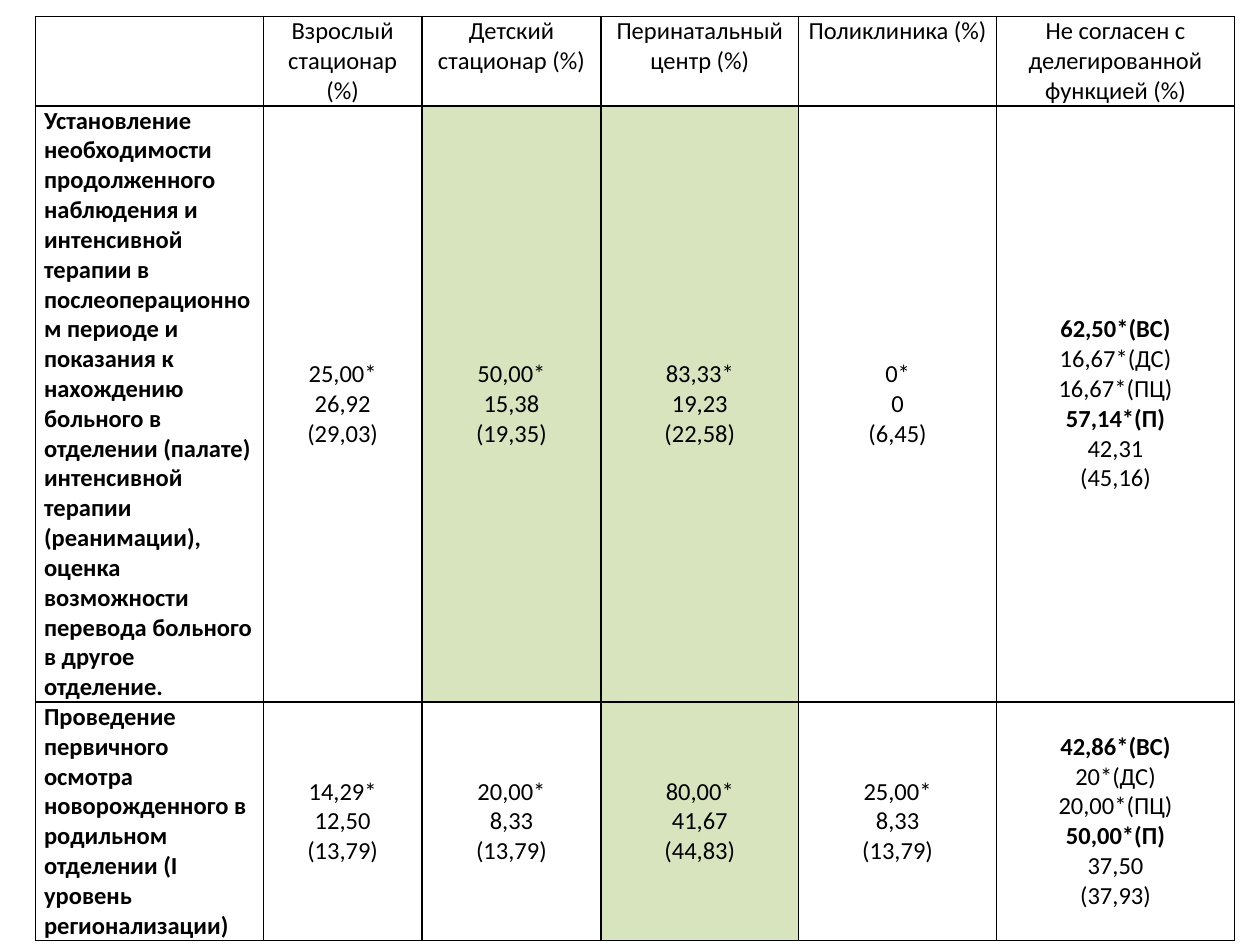
"""Build a slide with a table of survey shares by hospital unit."""
from lxml.etree import SubElement
from pptx import Presentation
from pptx.dml.color import RGBColor
from pptx.enum.text import MSO_ANCHOR, PP_ALIGN
from pptx.oxml.ns import qn
from pptx.util import Inches, Pt

BLACK = RGBColor(0x00, 0x00, 0x00)
GREEN = RGBColor(0xD7, 0xE4, 0xBD)
WIDTHS = [1.81, 1.26, 1.42, 1.57, 1.57, 1.89]
HEIGHTS = [0.71, 4.73, 1.89]
SHADED = {(1, 2), (1, 3), (2, 3)}
BOLD_ENDS = ("(ВС)", "(П)")
ROWS = [
    ["", "Взрослый стационар\n(%)", "Детский стационар (%)",
     "Перинатальный центр (%)", "Поликлиника (%)",
     "Не согласен с делегированной функцией (%)"],
    ["Установление необходимости продолженного наблюдения и интенсивной "
     "терапии в послеоперационном периоде и показания к нахождению больного "
     "в отделении (палате) интенсивной терапии (реанимации), оценка "
     "возможности перевода больного в другое отделение.",
     "25,00*\n26,92\n(29,03)", "50,00*\n15,38\n(19,35)",
     "83,33*\n19,23\n(22,58)", "0*\n0\n(6,45)",
     "62,50*(ВС)\n16,67*(ДС)\n16,67*(ПЦ)\n57,14*(П)\n42,31\n(45,16)"],
    ["Проведение первичного осмотра новорожденного в родильном отделении "
     "(I уровень регионализации)",
     "14,29*\n12,50\n(13,79)", "20,00*\n8,33\n(13,79)",
     "80,00*\n41,67\n(44,83)", "25,00*\n8,33\n(13,79)",
     "42,86*(ВС)\n20*(ДС)\n20,00*(ПЦ)\n50,00*(П)\n37,50\n(37,93)"],
]


def write(cell, text, align=PP_ALIGN.CENTER, anchor=MSO_ANCHOR.MIDDLE, bold=False):
    """Fill a cell with one paragraph per line of text."""
    cell.text = text
    cell.vertical_anchor = anchor
    cell.margin_left = cell.margin_right = Inches(0.07)
    cell.margin_top = cell.margin_bottom = Inches(0)
    for para in cell.text_frame.paragraphs:
        para.alignment = align
        para.font.name = "Calibri"
        para.font.size = Pt(14)
        para.font.color.rgb = BLACK
        for run in para.runs:
            run.font.name = "Calibri"
            run.font.size = Pt(14)
            run.font.color.rgb = BLACK
            run.font.bold = bold or run.text.endswith(BOLD_ENDS)


def border(cell):
    """Draw thin black lines on all four sides of a cell."""
    props = cell._tc.get_or_add_tcPr()
    for spot, side in enumerate(("a:lnL", "a:lnR", "a:lnT", "a:lnB")):
        line = SubElement(props, qn(side), w=str(Pt(1)))
        fill = SubElement(line, qn("a:solidFill"))
        SubElement(fill, qn("a:srgbClr"), val=str(BLACK))
        props.insert(spot, line)


deck = Presentation()
deck.slide_width, deck.slide_height = Inches(10), Inches(7.5)
slide = deck.slides.add_slide(deck.slide_layouts[6])
frame = slide.shapes.add_table(
    len(ROWS), len(WIDTHS), Inches(0.28), Inches(0.13),
    Inches(sum(WIDTHS)), Inches(sum(HEIGHTS)))
table = frame.table
table.first_row = table.horz_banding = False
for column, width in zip(table.columns, WIDTHS):
    column.width = Inches(width)
for row, height in zip(table.rows, HEIGHTS):
    row.height = Inches(height)

for r, texts in enumerate(ROWS):
    for c, text in enumerate(texts):
        cell = table.cell(r, c)
        if c == 0:
            write(cell, text, align=PP_ALIGN.LEFT, anchor=MSO_ANCHOR.TOP, bold=True)
        elif r == 0:
            write(cell, text, anchor=MSO_ANCHOR.TOP)
        else:
            write(cell, text)
        if (r, c) in SHADED:
            cell.fill.solid()
            cell.fill.fore_color.rgb = GREEN
        else:
            cell.fill.background()
        border(cell)

deck.save("out.pptx")
